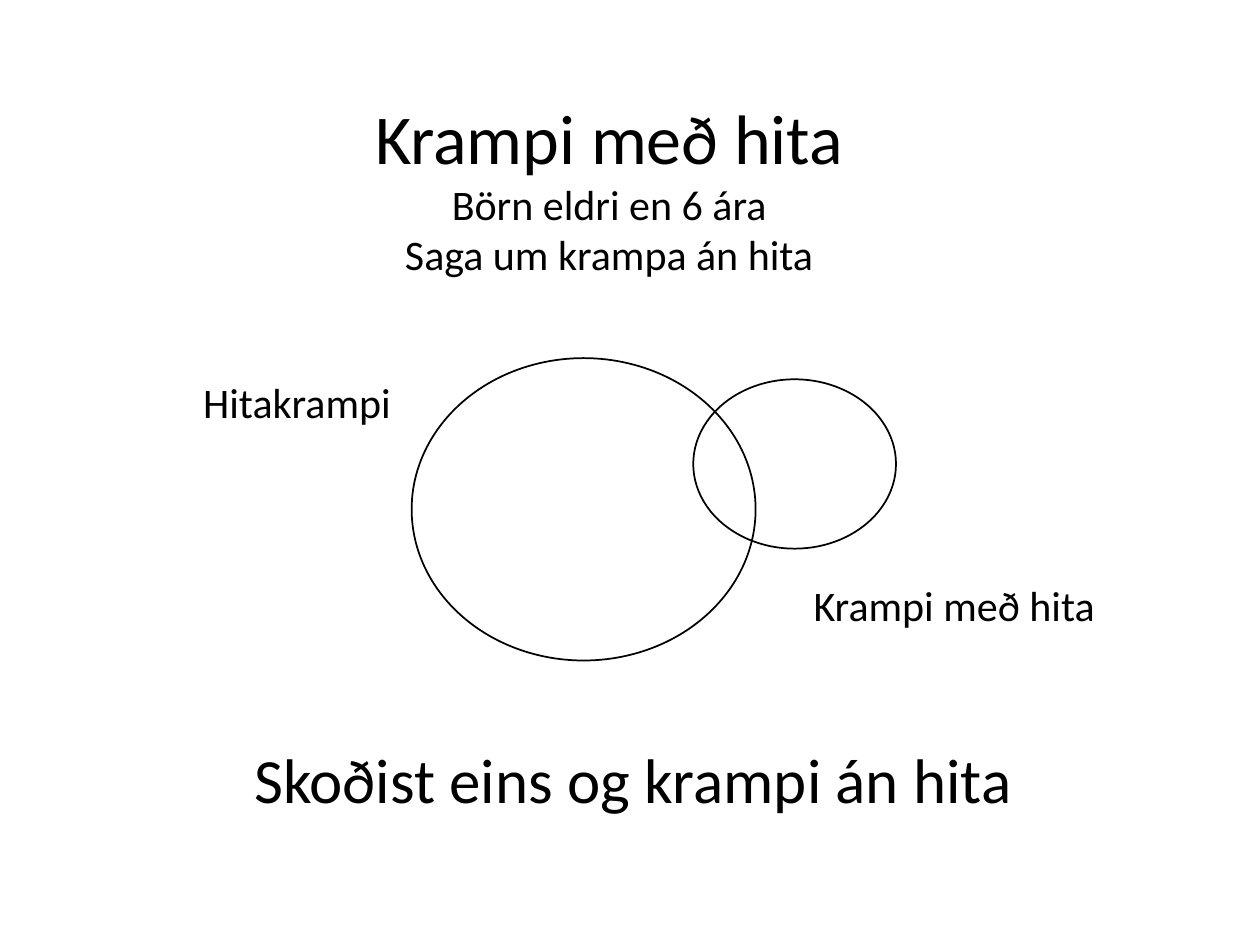
import pptx
import pptx.util
import pptx.dml.color
import pptx.enum.shapes
import pptx.enum.text

Inches, Pt = pptx.util.Inches, pptx.util.Pt
BLACK = pptx.dml.color.RGBColor(0, 0, 0)
WIDE, HIGH = 10, 7.5


def place(shape, box):
    shape.left, shape.top, shape.width, shape.height = map(Inches, box)


def write(shape, text, size=24, rest=24, font="Calibri", color=BLACK):
    """Fill a shape with centred lines; the first may differ in size."""
    frame = shape.text_frame
    frame.text = text
    frame.word_wrap = False
    frame.auto_size = pptx.enum.text.MSO_AUTO_SIZE.NONE
    frame.vertical_anchor = pptx.enum.text.MSO_ANCHOR.TOP
    for row, para in enumerate(frame.paragraphs):
        para.alignment = pptx.enum.text.PP_ALIGN.CENTER
        for run in para.runs:
            run.font.size = Pt(rest if row else size)
            run.font.name = font
            run.font.color.rgb = color


def label(slide, box, text, **style):
    write(slide.shapes.add_textbox(*map(Inches, box)), text, **style)


def head(slide, box):
    title = slide.shapes.title
    place(title, box)
    lines = ["Krampi með hita", "Börn eldri en 6 ára", "Saga um krampa án hita"]
    write(title, "\n".join(lines), size=40)


def venn(slide, box):
    """Two overlapping rings with their labels, as shares of the box."""
    left, top, wide, high = box

    def part(x, y, w, h):
        return left + x * wide, top + y * high, w * wide, h * high

    group = slide.shapes.add_group_shape()
    oval = pptx.enum.shapes.MSO_SHAPE.OVAL
    for share in [(0.24, 0, 0.375, 1), (0.547, 0.07, 0.221, 0.56)]:
        ring = group.shapes.add_shape(oval, *map(Inches, part(*share)))
        ring.shadow.inherit = False
        ring.fill.background()
        ring.line.color.rgb = BLACK
        ring.line.width = Pt(1)

    label(slide, part(0, 0.04, 0.23, 0.21), "Hitakrampi")
    label(slide, part(0.663, 0.71, 0.337, 0.21), "Krampi með hita")


def main():
    deck = pptx.Presentation()
    deck.slide_width, deck.slide_height = Inches(WIDE), Inches(HIGH)
    slide = deck.slides.add_slide(deck.slide_layouts[5])

    # Heading, diagram and closing line
    head(slide, (0.286 * WIDE, 0.093 * HIGH, 0.395 * WIDE, 0.264 * HIGH))
    venn(slide, (0.152 * WIDE, 0.379 * HIGH, 0.728 * WIDE, 0.32 * HIGH))
    label(slide, (0.189 * WIDE, 0.777 * HIGH, 0.638 * WIDE, 0.093 * HIGH),
          "Skoðist eins og krampi án hita ", size=36)

    deck.save("out.pptx")


if __name__ == "__main__":
    main()
